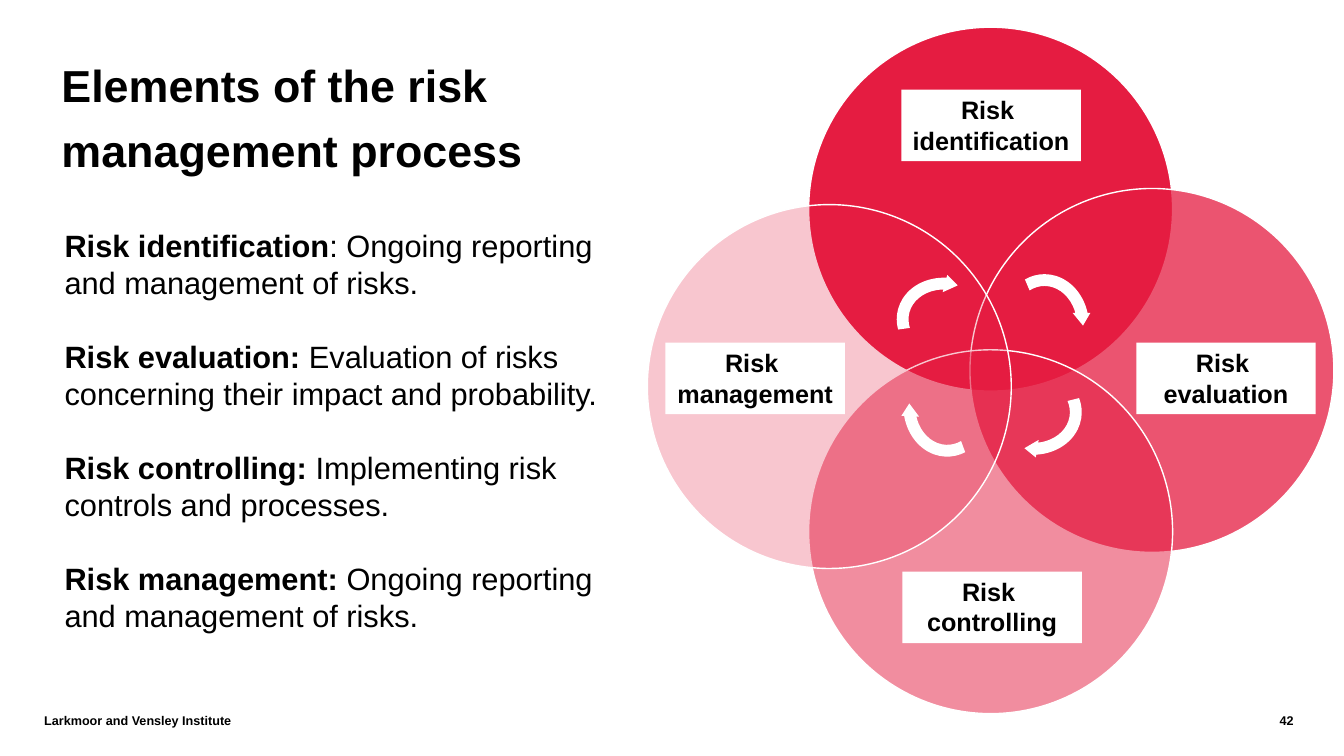
import dataclasses

import lxml.etree
import pptx
import pptx.dml.color
import pptx.enum.shapes
import pptx.enum.text
import pptx.oxml.ns
import pptx.util

Inches = pptx.util.Inches
Pt = pptx.util.Pt
Shape = pptx.enum.shapes.MSO_SHAPE
Align = pptx.enum.text.PP_ALIGN
Anchor = pptx.enum.text.MSO_ANCHOR
qn = pptx.oxml.ns.qn


@dataclasses.dataclass(frozen=True)
class Theme:
    font: str = "Arial"
    ink: str = "000000"
    paper: str = "FFFFFF"
    accent: str = "E51C41"
    title_size: float = 32
    body_size: float = 22
    label_size: float = 18
    footer_size: float = 9
    body_gap: float = 26.4


class RiskSlide:
    def __init__(self, deck, theme):
        self.theme = theme
        self.slide = deck.slides.add_slide(deck.slide_layouts[1])

    def color(self, value):
        return pptx.dml.color.RGBColor.from_string(value)

    def style(self, run, size, bold=True):
        run.font.name = self.theme.font
        run.font.size = Pt(size)
        run.font.bold = bold
        run.font.color.rgb = self.color(self.theme.ink)

    def place(self, holder, left, top, width, height):
        holder.left, holder.top = Inches(left), Inches(top)
        holder.width, holder.height = Inches(width), Inches(height)
        frame = holder.text_frame
        frame.word_wrap = True
        frame.auto_size = pptx.enum.text.MSO_AUTO_SIZE.NONE
        frame.vertical_anchor = Anchor.TOP
        return frame

    def title(self, text, *box):
        frame = self.place(self.slide.shapes.title, *box)
        frame.text = text
        heading = frame.paragraphs[0]
        heading.alignment = Align.LEFT
        heading.line_spacing = 1.2
        self.style(heading.runs[0], self.theme.title_size)

    def definitions(self, entries, *box):
        frame = self.place(self.slide.placeholders[1], *box)
        for index, (term, meaning) in enumerate(entries):
            entry = frame.paragraphs[0] if index == 0 else frame.add_paragraph()
            entry.text = term
            entry.add_run().text = meaning
            entry.alignment = Align.LEFT
            entry.space_before = Pt(self.theme.body_gap if index else 0)
            properties = entry._p.get_or_add_pPr()
            properties.set("marL", "0")
            properties.set("indent", "0")
            lxml.etree.SubElement(properties, qn("a:buNone"))
            for run, bold in zip(entry.runs, (True, False)):
                self.style(run, self.theme.body_size, bold)

    def footer(self, text, align, *box):
        frame = self.slide.shapes.add_textbox(*map(Inches, box)).text_frame
        frame.word_wrap = True
        frame.vertical_anchor = Anchor.MIDDLE
        frame.text = text
        frame.paragraphs[0].alignment = align
        self.style(frame.paragraphs[0].runs[0], self.theme.footer_size)

    def figure(self, preset, fill, *box):
        figure = self.slide.shapes.add_shape(preset, *map(Inches, box))
        figure.shadow.inherit = False
        figure.fill.solid()
        figure.fill.fore_color.rgb = self.color(fill)
        figure.line.fill.background()
        return figure

    def circle(self, left, top, diameter, opacity):
        circle = self.figure(Shape.OVAL, self.theme.accent, left, top, diameter, diameter)
        circle.line.color.rgb = self.color(self.theme.paper)
        circle.line.width = Pt(1)
        if opacity < 100:
            tint = circle._element.spPr.find(qn("a:solidFill"))[0]
            lxml.etree.SubElement(tint, qn("a:alpha")).set("val", str(opacity * 1000))

    def label(self, stage, left, top):
        frame = self.figure(Shape.RECTANGLE, self.theme.paper, left, top, 1.78, 0.71).text_frame
        frame.word_wrap = False
        frame.vertical_anchor = Anchor.TOP
        frame.text = f"Risk \n{stage}"
        for line in frame.paragraphs:
            line.alignment = Align.CENTER
            self.style(line.runs[0], self.theme.label_size)

    def cycle_arrow(self, left, top, rotation):
        arrow = self.figure(Shape.CIRCULAR_ARROW, self.theme.paper, left, top, 0.94, 1.08)
        for index, value in enumerate((0.125, 11.423, 204.577, 148.201, 0.094)):
            arrow.adjustments[index] = value
        arrow.rotation = rotation


DEFINITIONS = (
    ("Risk identification", ": Ongoing reporting and management of risks."),
    ("Risk evaluation: ", "Evaluation of risks concerning their impact and probability."),
    ("Risk controlling: ", "Implementing risk controls and processes."),
    ("Risk management: ", "Ongoing reporting and management of risks."),
)
CIRCLES = ((8.02, 0.27, 100), (9.62, 1.87, 75), (8.02, 3.47, 50), (6.42, 2.03, 25))
LABELS = (
    ("management", 6.6, 3.4),
    ("evaluation", 11.27, 3.4),
    ("identification", 8.94, 0.89),
    ("controlling", 8.95, 5.67),
)
ARROWS = ((8.93, 3.48, 182.6), (8.93, 2.66, 285), (9.89, 2.69, 0), (9.75, 3.53, 99))


def main():
    deck = pptx.Presentation()
    deck.slide_width, deck.slide_height = Inches(13.33), Inches(7.5)
    page = RiskSlide(deck, Theme())
    page.title("Elements of the risk management process", 0.51, 0.42, 4.84, 1.45)
    page.definitions(DEFINITIONS, 0.54, 2.2, 5.71, 5.15)
    page.footer("Larkmoor and Vensley Institute", Align.LEFT, 0.34, 6.95, 11.21, 0.4)
    page.footer("42", Align.RIGHT, 11.6, 6.95, 1.33, 0.4)
    for left, top, opacity in CIRCLES:
        page.circle(left, top, 3.61, opacity)
    for stage, left, top in LABELS:
        page.label(stage, left, top)
    for left, top, rotation in ARROWS:
        page.cycle_arrow(left, top, rotation)
    deck.save("out.pptx")


if __name__ == "__main__":
    main()
